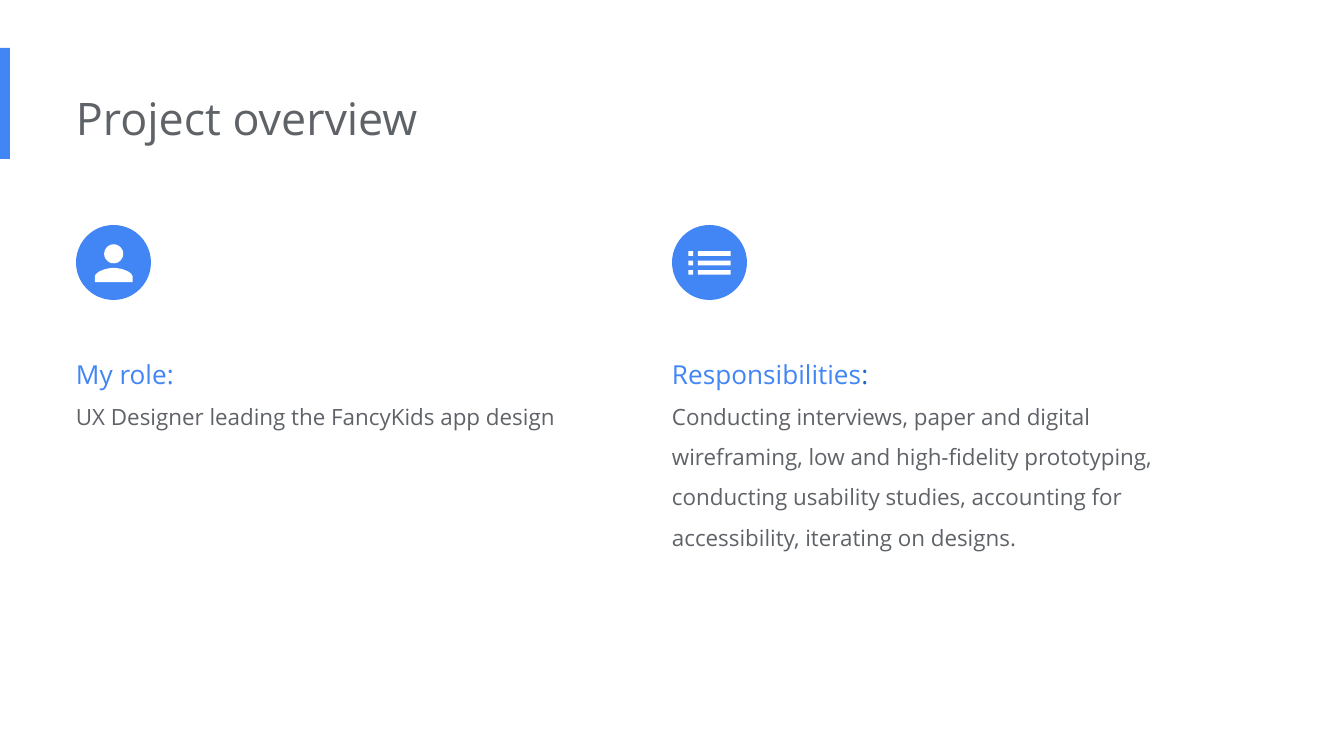
from math import cos, sin, tau
from pptx import Presentation
from pptx.dml.color import RGBColor
from pptx.enum.shapes import MSO_SHAPE
from pptx.enum.text import MSO_ANCHOR, MSO_AUTO_SIZE, PP_ALIGN
from pptx.util import Pt

RECT, OVAL = MSO_SHAPE.RECTANGLE, MSO_SHAPE.OVAL
TOP, LEFT, FIXED = MSO_ANCHOR.TOP, PP_ALIGN.LEFT, MSO_AUTO_SIZE.NONE
PX = 914400 / 134.4
FINE = 10  # icon units per px
THEME = {
    "font": "Open Sans",
    "blue": RGBColor.from_string("4285F4"),
    "deep": RGBColor.from_string("1967D2"),
    "gray": RGBColor.from_string("5F6368"),
    "white": RGBColor.from_string("FFFFFF"),
    "title": Pt(24), "head": Pt(14), "body": Pt(12),
}


def paint(shape, color):
    shape.shadow.inherit = False
    shape.fill.solid()
    shape.fill.fore_color.rgb = THEME[color]
    shape.line.fill.background()


def write(shape, box, lines, gap):
    """Place a text shape; each line is a size and its (text, color) runs."""
    for name, px in zip(("left", "top", "width", "height"), box):
        setattr(shape, name, round(px * PX))
    frame = shape.text_frame
    pad = round(13.44 * PX)
    form = {"word_wrap": True, "auto_size": FIXED, "vertical_anchor": TOP,
            "margin_left": 0, "margin_top": pad,
            "margin_right": pad, "margin_bottom": pad}
    for name, value in form.items():
        setattr(frame, name, value)
    for i, (size, runs) in enumerate(lines):
        para = frame.add_paragraph() if i else frame.paragraphs[0]
        para.alignment, para.line_spacing = LEFT, gap
        for text, color in runs:
            run = para.add_run()
            run.text = text
            run.font.color.rgb = THEME[color]
            for name, value in {"name": THEME["font"], "size": THEME[size]}.items():
                setattr(run.font, name, value)


# Slide
deck = Presentation()
deck.slide_width, deck.slide_height = round(1344 * PX), round(756 * PX)
slide = deck.slides.add_slide(deck.slide_layouts[5])
shapes = slide.shapes

# Accent bar and title
bar = shapes.add_shape(RECT, 0, round(48 * PX), round(10 * PX), round(111 * PX))
paint(bar, "blue")
write(shapes.title, (76, 77, 905, 82),
      [("title", [("Project overview", "gray")])], 1.0)

# Columns: round badge above heading and text
columns = [
    (76, 102, [("My role:", "blue")],
     "UX Designer leading the FancyKids app design"),
    (672, 224, [("Responsibilities", "blue"), (":", "deep")],
     "Conducting interviews, paper and digital wireframing, low and "
     "high-fidelity prototyping, conducting usability studies, accounting for "
     "accessibility, iterating on designs."),
]
for x, high, head, body in columns:
    badge = shapes.add_shape(OVAL, *(round(n * PX) for n in (x, 225, 75, 75)))
    paint(badge, "blue")
    write(shapes.add_textbox(0, 0, 0, 0), (x, 329, 507, high),
          [("head", head), ("body", [(body, "gray")])], 1.5)

# Person icon: round head, and shoulders curving out from the middle
mid = 1138
ring = [(mid + 95 * cos(tau * i / 48), 2539 + 95 * sin(tau * i / 48))
        for i in range(48)]
curve = []
for i in range(17):
    t = i / 16
    u = 1 - t
    curve.append((3 * u * u * t * 64 + 3 * u * t * t * 189 + t ** 3 * 189,
                  2680 * (u ** 3 + 3 * u * u * t) + 3 * u * t * t * 2712
                  + t ** 3 * 2774))
half = curve + [(189, 2821)]
torso = [(mid - x, y) for x, y in half]
torso += [(mid + x, y) for x, y in reversed(half)]

# List icon: three rows of a dot and a bar
rows = []
for i in range(3):
    y = 2513 + 94 * i
    for a, b in ((6885, 6932), (6979, 7307)):
        rows.append([(a, y), (b, y), (b, y + 47), (a, y + 47)])

# Draw each icon as one outline
for parts in ([ring, torso], rows):
    pen = shapes.build_freeform(*parts[0][0], scale=PX / FINE)
    for i, part in enumerate(parts):
        if i:
            pen.move_to(*part[0])
        pen.add_line_segments(part[1:], close=True)
    paint(pen.convert_to_shape(), "white")

deck.save("out.pptx")
